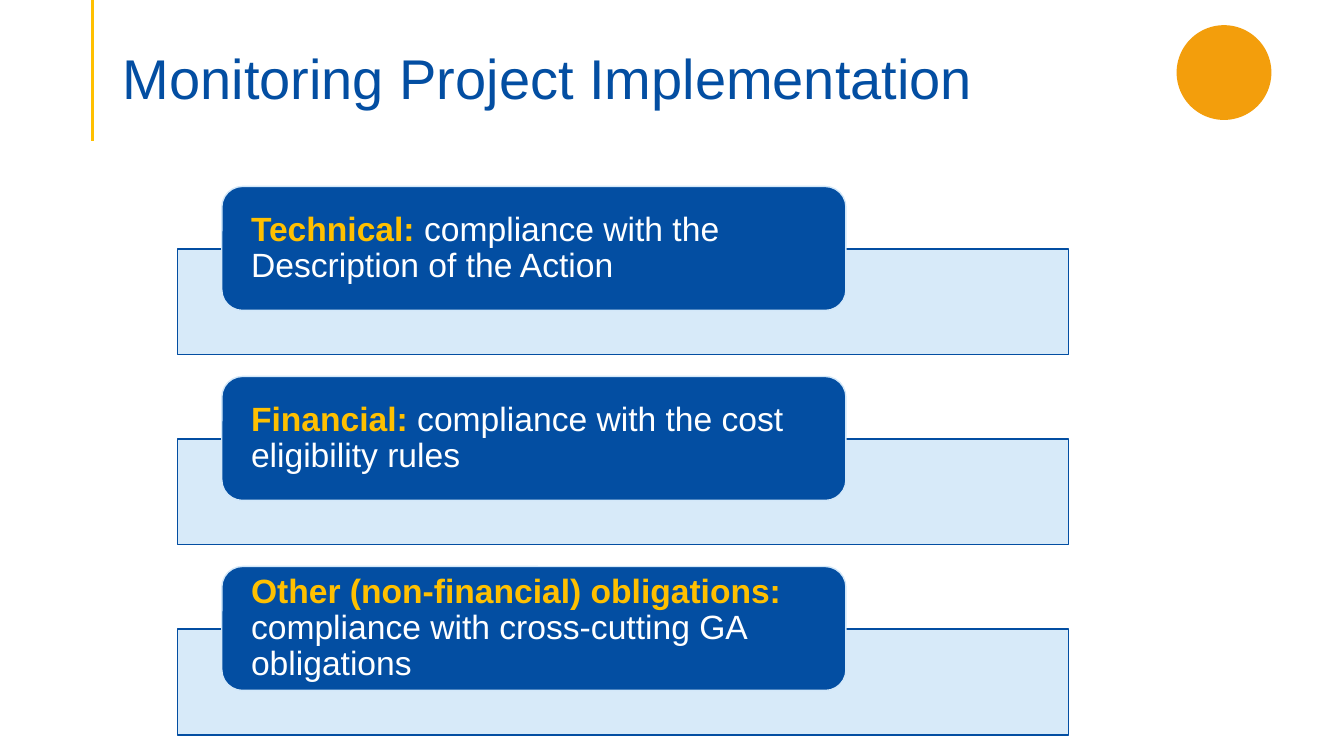
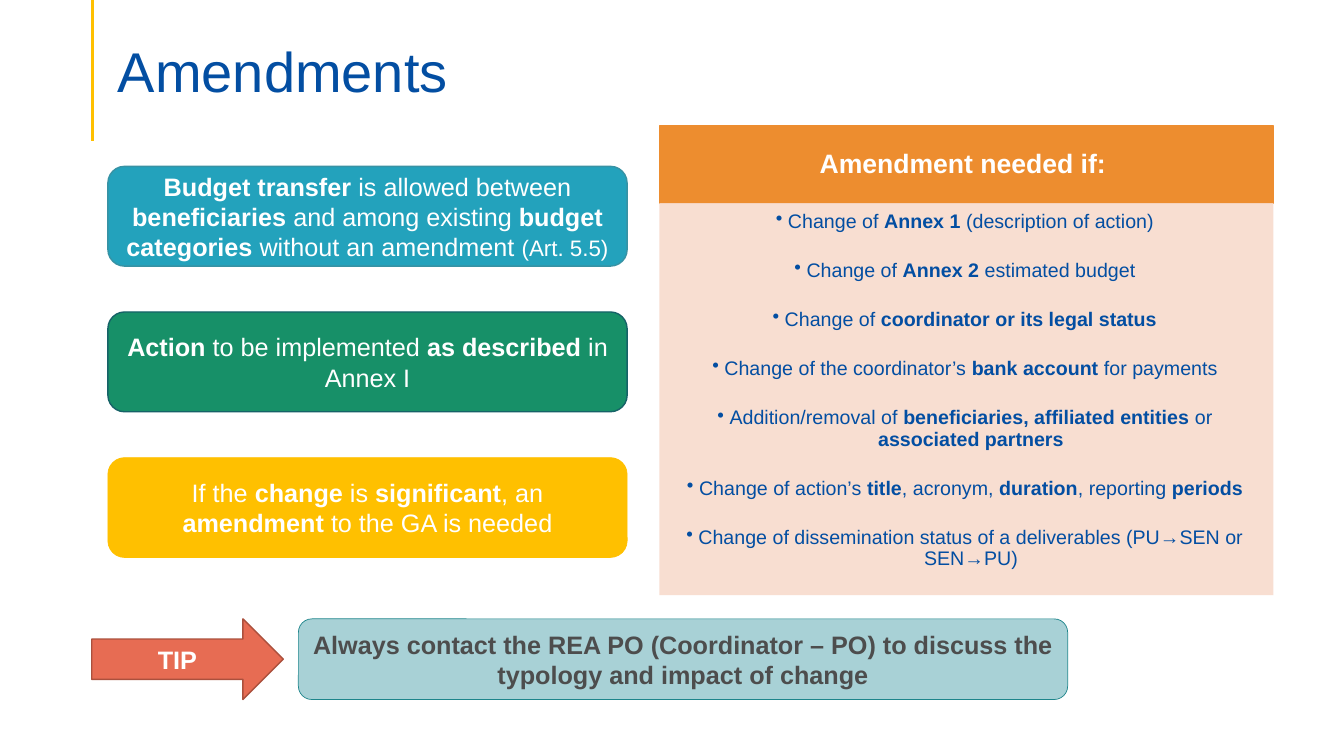
from lxml import etree
from pptx import Presentation
from pptx.dml.color import RGBColor
from pptx.enum.shapes import MSO_CONNECTOR, MSO_SHAPE
from pptx.enum.text import MSO_ANCHOR, PP_ALIGN
from pptx.oxml.ns import qn
from pptx.util import Inches, Pt

RECT, ROUND = MSO_SHAPE.RECTANGLE, MSO_SHAPE.ROUNDED_RECTANGLE
OVAL, ARROW = MSO_SHAPE.OVAL, MSO_SHAPE.RIGHT_ARROW
LEFT, MID = PP_ALIGN.LEFT, PP_ALIGN.CENTER
TOP, CENTRE, BASE = MSO_ANCHOR.TOP, MSO_ANCHOR.MIDDLE, MSO_ANCHOR.BOTTOM

FONT = "Arial"
WHITE = RGBColor(0xFF, 0xFF, 0xFF)
BLUE = RGBColor(0x03, 0x4E, 0xA2)
SKY = RGBColor(0xD3, 0xE8, 0xF9)
GOLD = RGBColor(0xFF, 0xC0, 0x00)
AMBER = RGBColor(0xF3, 0x9E, 0x0C)
ORANGE = RGBColor(0xED, 0x8D, 0x2F)
PEACH = RGBColor(0xF8, 0xDB, 0xCD)
TEAL = RGBColor(0x23, 0xA2, 0xBC)
TEAL_EDGE = RGBColor(0x37, 0x92, 0xA4)
GREEN = RGBColor(0x17, 0x90, 0x68)
GREEN_EDGE = RGBColor(0x16, 0x62, 0x67)
CORAL = RGBColor(0xE7, 0x6C, 0x53)
CORAL_EDGE = RGBColor(0xAB, 0x50, 0x3D)
MIST = RGBColor(0xA8, 0xD1, 0xD6)
MIST_EDGE = RGBColor(0x1E, 0x85, 0x8B)
GREY = RGBColor(0x4D, 0x4D, 0x4D)

# In texts, *...* is bold and ^...^ is small.
CHECKS = [
    "*Technical: *compliance with the Description of the Action",
    "*Financial: *compliance with the cost eligibility rules",
    "*Other (non-financial) obligations:* compliance with cross-cutting GA obligations",
]
RULES = [
    ("*Budget transfer *is allowed between *beneficiaries* and among existing "
     "*budget categories *without an amendment ^(Art. 5.5)^", TEAL, TEAL_EDGE, 1),
    ("*Action* to be implemented *as described *in Annex I", GREEN, GREEN_EDGE, 1),
    ("If the *change* is *significant*, an *amendment* to the GA is needed",
     GOLD, GOLD, 0.5),
]
CASES = [
    "Change of *Annex 1 *(description of action)",
    "Change of *Annex 2* estimated budget",
    "Change of *coordinator or its legal status*",
    "Change of the coordinator’s *bank account *for payments",
    "Addition/removal of *beneficiaries, affiliated entities *or *associated partners*",
    "Change of action’s *title*, acronym, *duration*, reporting *periods*",
    "Change of dissemination status of a deliverables (PU→SEN or SEN→PU)",
]
TIP = "*Always contact the REA PO (Coordinator – PO) to discuss the typology and impact of change*"


def add_box(slide, kind, box, fill, edge=None, width=1, alpha=None):
    shape = slide.shapes.add_shape(kind, *map(Inches, box))
    shape.shadow.inherit = False
    shape.fill.solid()
    shape.fill.fore_color.rgb = fill
    if edge is None:
        shape.line.fill.background()
    else:
        shape.line.color.rgb = edge
        shape.line.width = Pt(width)
    if alpha:
        tint = shape._element.spPr.find(qn("a:solidFill"))[0]
        etree.SubElement(tint, qn("a:alpha"), val=str(alpha * 1000))
    return shape


def add_bullet(para, indent):
    props = para._p.get_or_add_pPr()
    props.set("marL", str(Inches(indent)))
    props.set("indent", str(-Inches(indent)))
    etree.SubElement(props, qn("a:buChar"), char="•")


def write(shape, texts, size, color, align=MID, anchor=CENTRE, bold=None,
          pad=(0.1, 0.05, 0.1, 0.05), lead=None, gap=0, indent=None):
    """Fill a shape with marked-up paragraphs; bold is the colour of bold runs."""
    frame = shape.text_frame
    frame.word_wrap = True
    frame.vertical_anchor = anchor
    (frame.margin_left, frame.margin_top,
     frame.margin_right, frame.margin_bottom) = map(Inches, pad)
    for i, text in enumerate(texts):
        para = frame.paragraphs[0] if i == 0 else frame.add_paragraph()
        para.alignment = align
        para.line_spacing = lead
        para.space_after = Pt(gap)
        if indent:
            add_bullet(para, indent)
        font = para.font
        font.name, font.size, font.color.rgb = FONT, Pt(size), color
        for j, part in enumerate(text.split("*")):
            for k, piece in enumerate(part.split("^")):
                if not piece:
                    continue
                run = para.add_run()
                run.text = piece
                if j % 2:
                    run.font.bold = True
                    if bold is not None:
                        run.font.color.rgb = bold
                if k % 2:
                    run.font.size = Pt(size - 2)


def start(deck, title, box):
    """Add a slide with the gold rule and the title."""
    slide = deck.slides.add_slide(deck.slide_layouts[6])
    x = Inches(0.92)
    rule = slide.shapes.add_connector(MSO_CONNECTOR.STRAIGHT, x, 0, x, Inches(1.4))
    rule.line.color.rgb = GOLD
    rule.line.width = Pt(2.25)
    etree.SubElement(rule._element.spPr, qn("a:effectLst"))
    head = slide.shapes.add_textbox(*map(Inches, box))
    write(head, [title], 40, BLUE, LEFT, BASE, pad=(0.1, 0.05, 0.1, 0), lead=0.9)
    return slide


def draw_checks(deck):
    slide = start(deck, "Monitoring Project Implementation", (1.12, 0.25, 11.5, 0.86))
    add_box(slide, OVAL, (11.67, 0.25, 0.94, 0.94), AMBER)
    top, pitch = 1.85, 1.885
    for i, text in enumerate(CHECKS):
        y = top + i * pitch
        add_box(slide, RECT, (1.76, y + 0.62, 8.84, 1.05), SKY, BLUE, alpha=90)
        label = add_box(slide, ROUND, (2.2, y, 6.19, 1.23), BLUE, SKY)
        write(label, [text], 24, WHITE, LEFT, bold=GOLD, pad=(0.23, 0, 0.23, 0), lead=0.9)


def draw_changes(deck):
    slide = start(deck, "Amendments", (1.07, 0.24, 11.48, 0.8))
    x, y, wide, high = 6.54, 1.25, 6.09, 0.765
    head = add_box(slide, RECT, (x, y, wide, high), ORANGE, ORANGE)
    write(head, ["*Amendment needed if: *"], 19, WHITE,
          pad=(0.15, 0.08, 0.15, 0.08), lead=0.9)
    body = add_box(slide, RECT, (x, y + high, wide, 3.89), PEACH, alpha=90)
    write(body, CASES, 14, BLUE, anchor=TOP, pad=(0.08, 0.08, 0.11, 0.12),
          lead=0.9, gap=20, indent=0.12)

    top, pitch = 1.65, 1.445
    for i, (text, fill, edge, width) in enumerate(RULES):
        card = add_box(slide, ROUND, (1.07, top + i * pitch, 5.15, 0.99), fill, edge, width)
        write(card, [text], 18, WHITE)

    note = add_box(slide, ROUND, (2.96, 6.14, 7.63, 0.8), MIST, MIST_EDGE, 0.5)
    write(note, [TIP], 18, GREY)
    arrow = add_box(slide, ARROW, (0.91, 6.14, 1.9, 0.8), CORAL, CORAL_EDGE)
    write(arrow, ["*TIP*"], 18, WHITE)


def main():
    deck = Presentation()
    deck.slide_width, deck.slide_height = Inches(13.33), Inches(7.5)
    draw_checks(deck)
    draw_changes(deck)
    deck.save("out.pptx")


if __name__ == "__main__":
    main()
